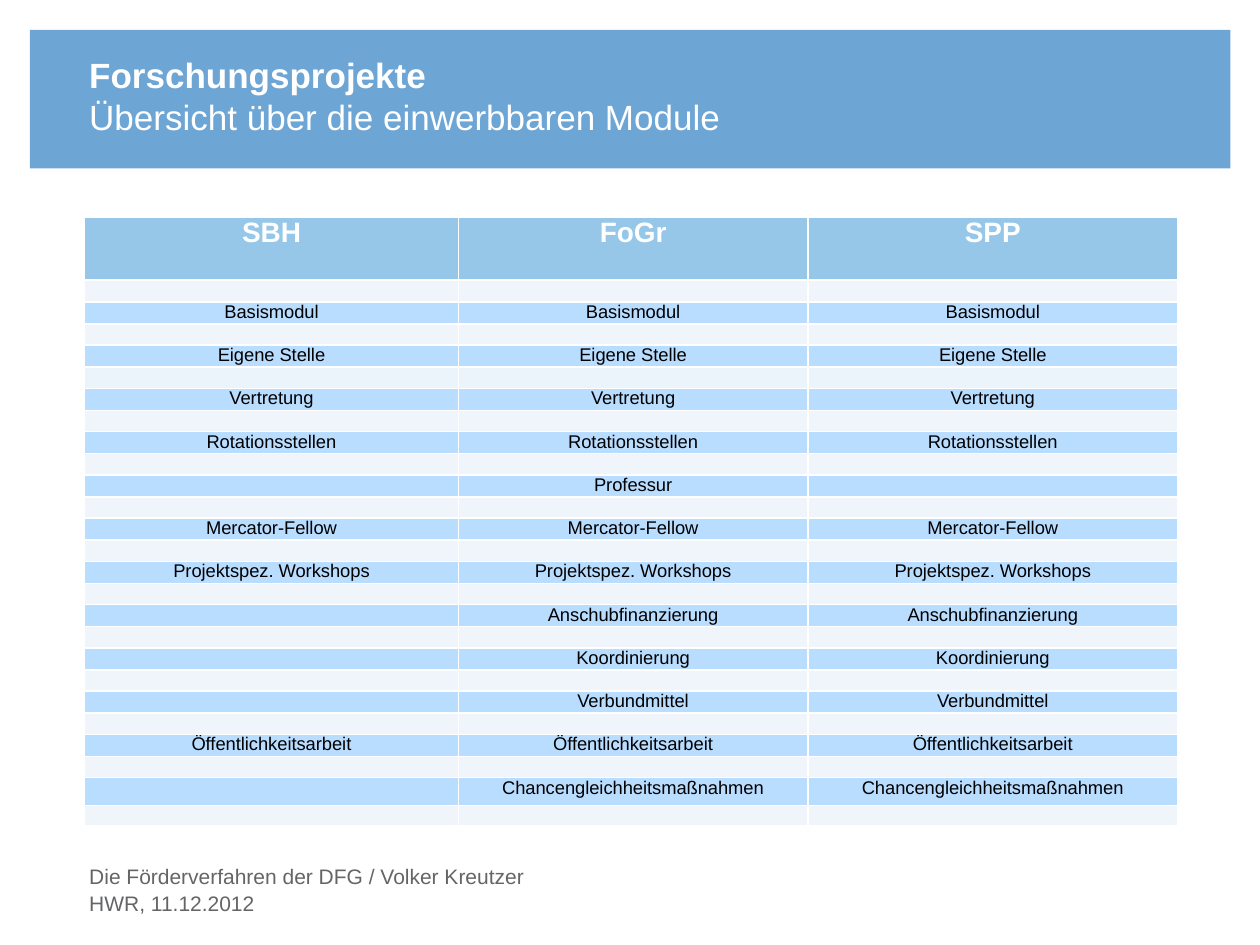
from lxml import etree
from pptx import Presentation
from pptx.dml.color import RGBColor
from pptx.enum.shapes import MSO_SHAPE
from pptx.enum.text import MSO_ANCHOR, PP_ALIGN
from pptx.oxml.ns import qn
from pptx.util import Pt

RECT = MSO_SHAPE.RECTANGLE
TOP, BOTTOM = MSO_ANCHOR.TOP, MSO_ANCHOR.BOTTOM
CENTER = PP_ALIGN.CENTER


def rgb(value):
    return RGBColor.from_string(value)


def add_run(p, text, size, color, bold=False):
    r = p.add_run()
    r.text = text
    for name, value in dict(name="Arial", size=Pt(size), bold=bold).items():
        setattr(r.font, name, value)
    r.font.color.rgb = rgb(color)


prs = Presentation()
prs.slide_width, prs.slide_height = Pt(720), Pt(540)
s = prs.slides.add_slide(prs.slide_layouts[6])

# Header band
band = s.shapes.add_shape(RECT, Pt(17.1), Pt(17.1), Pt(686), Pt(79.2))
band.shadow.inherit = False
band.fill.solid()
band.fill.fore_color.rgb = rgb("6DA5D5")
band.line.fill.background()

# Title, subtitle and footer lines: text, top, width, height, anchor, size, color, bold
lines = [
    ("Forschungsprojekte", 33.1, 623.5, 21.6, BOTTOM, 20, "FFFFFF", True),
    ("Übersicht über die einwerbbaren Module", 57, 623.5, 21.6, BOTTOM, 20, "FFFFFF", False),
    ("Die Förderverfahren der DFG / Volker Kreutzer", 493.2, 500.4, 15.8, TOP, 12, "646567", False),
    ("HWR, 11.12.2012", 508.7, 500.4, 19.4, TOP, 12, "646567", False),
]
frame_format = dict(word_wrap=True, margin_left=0, margin_right=0, margin_top=0, margin_bottom=0)
for text, top, width, height, anchor, size, color, bold in lines:
    tf = s.shapes.add_textbox(Pt(51), Pt(top), Pt(width), Pt(height)).text_frame
    for name, value in frame_format.items():
        setattr(tf, name, value)
    tf.vertical_anchor = anchor
    add_run(tf.paragraphs[0], text, size, color, bold)

# Modules, with the programmes that offer them
programmes = ["SBH", "FoGr", "SPP"]
every, group, group_spp = programmes, ["FoGr"], ["FoGr", "SPP"]
modules = [
    ("Basismodul", every),
    ("Eigene Stelle", every),
    ("Vertretung", every),
    ("Rotationsstellen", every),
    ("Professur", group),
    ("Mercator-Fellow", every),
    ("Projektspez. Workshops", every),
    ("Anschubfinanzierung", group_spp),
    ("Koordinierung", group_spp),
    ("Verbundmittel", group_spp),
    ("Öffentlichkeitsarbeit", every),
    ("Chancengleichheitsmaßnahmen", group_spp),
]

# Table rows: header, then a spacer row before and after each module
spacer = [""] * len(programmes)
rows = [programmes, spacer]
for module, offered in modules:
    rows += [[module if p in offered else "" for p in programmes], spacer]
heights = [36, 12.6] + [12.12] * (len(rows) - 4) + [16, 11.4]
widths = [213.6, 199.7, 211.4]

table = s.shapes.add_table(len(rows), len(widths), Pt(48.4), Pt(123.9),
                           Pt(sum(widths)), Pt(sum(heights))).table
for column, width in zip(table.columns, widths):
    column.width = Pt(width)

cell_format = dict(margin_left=Pt(0.7), margin_right=Pt(0.7), margin_top=0, margin_bottom=0)
for i, (row, height) in enumerate(zip(rows, heights)):
    table.rows[i].height = Pt(height)
    if i == 0:
        fill, text_format = "96C7E8", (16, "FFFFFF", True)
    else:
        fill, text_format = "EFF5FB" if i % 2 else "B9DDFF", (10.5, "000000")
    if i == 5:
        fill = "EAF4FA"
    for j, text in enumerate(row):
        cell = table.cell(i, j)
        for name, value in cell_format.items():
            setattr(cell, name, value)
        # Thin white borders go before the fill
        tc_pr = cell._tc.get_or_add_tcPr()
        for side in ("a:lnL", "a:lnR", "a:lnT", "a:lnB"):
            ln = etree.SubElement(tc_pr, qn(side), w=str(Pt(1)))
            solid = etree.SubElement(ln, qn("a:solidFill"))
            etree.SubElement(solid, qn("a:srgbClr"), val="FFFFFF")
        cell.fill.solid()
        cell.fill.fore_color.rgb = rgb(fill)
        p = cell.text_frame.paragraphs[0]
        p.alignment = CENTER
        if text:
            add_run(p, text, *text_format)
        else:
            # Small type keeps empty cells from growing
            etree.SubElement(p._p, qn("a:endParaRPr"), sz="800")

prs.save("out.pptx")
